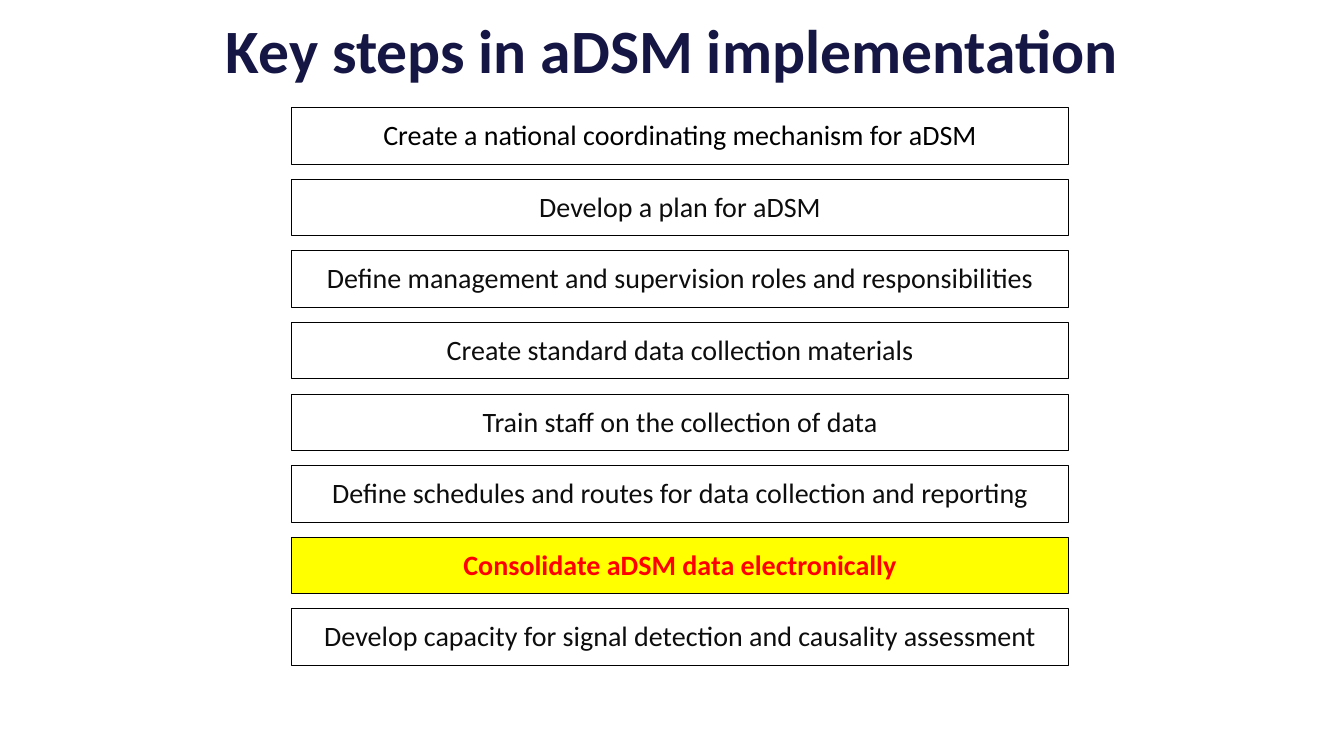
from pptx import Presentation
from pptx.dml.color import RGBColor
from pptx.enum.shapes import MSO_SHAPE as Shape
from pptx.enum.text import MSO_ANCHOR as Anchor, PP_ALIGN as Align
from pptx.util import Inches, Pt

COLORS = {
    "title": "161645",
    "line": "000000",
    "first": "000000",
    "text": "0D0D0D",
    "box": "FFFFFF",
    "highlight": "FFFF00",
    "alert": "FF0000",
}
STEPS = [
    "Create a national coordinating mechanism for aDSM",
    "Develop a plan for aDSM",
    "Define management and supervision roles and responsibilities",
    "Create standard data collection materials",
    "Train staff on the collection of data",
    "Define schedules and routes for data collection and reporting",
    "Consolidate aDSM data electronically",
    "Develop capacity for signal detection and causality assessment",
]
UNFILLED_STEPS = 3
HIGHLIGHTED_STEP = 6

# Column of step boxes, in inches
LEFT, TOP, WIDTH, HEIGHT = 2.89, 1.07, 7.71, 0.56
ROW_PITCH = 0.71


def color(name):
    return RGBColor.from_string(COLORS[name])


def write_text(shape, text, *, size, color_name, bold=False, anchor=Anchor.TOP,
               line_spacing=None, space_after=None):
    frame = shape.text_frame
    frame.word_wrap = True
    frame.vertical_anchor = anchor
    frame.margin_left = frame.margin_right = Inches(0.1)
    frame.margin_top = frame.margin_bottom = Inches(0.05)
    paragraph = frame.paragraphs[0]
    paragraph.alignment = Align.CENTER
    paragraph.line_spacing = line_spacing
    paragraph.space_after = space_after
    run = paragraph.add_run()
    run.text = text
    run.font.name = "Calibri"
    run.font.size = Pt(size)
    run.font.bold = bold
    run.font.color.rgb = color(color_name)


presentation = Presentation()
presentation.slide_width = Inches(13.33)
presentation.slide_height = Inches(7.5)
slide = presentation.slides.add_slide(presentation.slide_layouts[5])

title = slide.shapes.title
title.left, title.top = Inches(2.1), Inches(0.05)
title.width, title.height = Inches(9.14), Inches(0.87)
write_text(title, "Key steps in aDSM implementation", size=44,
           color_name="title", bold=True, anchor=Anchor.MIDDLE, line_spacing=1.0)

step_group = slide.shapes.add_group_shape()
for row, step in enumerate(STEPS):
    box = step_group.shapes.add_shape(
        Shape.RECTANGLE, Inches(LEFT), Inches(TOP + row * ROW_PITCH),
        Inches(WIDTH), Inches(HEIGHT))
    box.shadow.inherit = False
    box.line.color.rgb = color("line")
    box.line.width = Pt(0.75)
    highlighted = row == HIGHLIGHTED_STEP
    if row < UNFILLED_STEPS:
        box.fill.background()
    else:
        box.fill.solid()
        box.fill.fore_color.rgb = color("highlight" if highlighted else "box")
    text_color = "alert" if highlighted else "first" if row == 0 else "text"
    write_text(box, step, size=20, color_name=text_color, bold=highlighted,
               line_spacing=1.15, space_after=Pt(10))

presentation.save("out.pptx")
